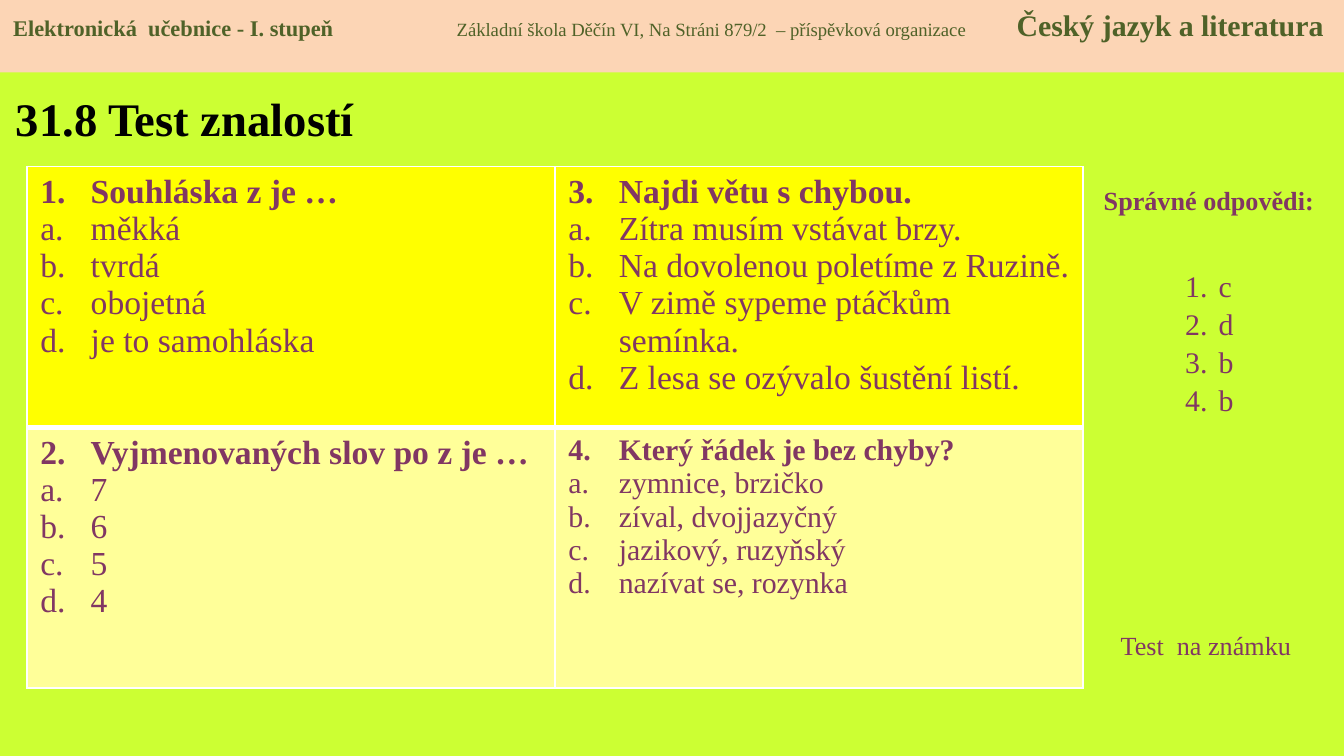
from lxml.etree import SubElement
from pptx import Presentation
from pptx.dml.color import RGBColor
from pptx.enum.shapes import MSO_SHAPE as Shape
from pptx.enum.text import MSO_ANCHOR as Anchor, PP_ALIGN as Align
from pptx.oxml.ns import qn
from pptx.util import Pt

COLORS = {
    "page": "CCFF33", "header": "FCD5B5", "header_text": "4F6228",
    "title": "000000", "text": "813763", "border": "FFFFFF",
    "top_row": "FFFF00", "bottom_row": "FFFF99",
}

# Each question: text size, heading, options
QUESTIONS = [
    [(18, "Souhláska z je …", ["měkká", "tvrdá", "obojetná", "je to samohláska"]),
     (18, "Najdi větu s chybou.",
      ["Zítra musím vstávat brzy.", "Na dovolenou poletíme z Ruzině.",
       "V zimě sypeme ptáčkům semínka.", "Z lesa se ozývalo šustění listí."])],
    [(18, "Vyjmenovaných slov po z je …", ["7", "6", "5", "4"]),
     (16, "Který řádek je bez chyby?",
      ["zymnice, brzičko", "zíval, dvojjazyčný", "jazikový, ruzyňský",
       "nazívat se, rozynka"])],
]
HEADER = [("Elektronická  učebnice - I. stupeň", 12, True),
          ("\tZákladní škola Děčín VI, Na Stráni 879/2  – příspěvková organizace", 10, False),
          ("\tČeský jazyk a literatura", 16, True)]
HEADER_TABS = [237.6, 537.6]


class SlideBuilder:
    font = "Times New Roman"

    def __init__(self, page):
        self.page = page

    def color(self, name):
        return RGBColor.from_string(COLORS[name])

    def paint(self, target, name):
        target.fill.solid()
        target.fill.fore_color.rgb = self.color(name)

    def style(self, span, size, color="text", bold=False):
        span.font.name = self.font
        span.font.size = Pt(size)
        span.font.bold = bold
        span.font.color.rgb = self.color(color)

    def number(self, para, indent, scheme, start=1):
        props = para._p.get_or_add_pPr()
        props.set("marL", str(Pt(indent)))
        props.set("indent", str(-Pt(indent)))
        bullet = SubElement(props, qn("a:buAutoNum"), type=scheme)
        if start > 1:
            bullet.set("startAt", str(start))

    def text(self, area, lines, size, color="text", bold=False, align=Align.LEFT):
        box = self.page.shapes.add_textbox(*map(Pt, area))
        frame = box.text_frame
        frame.word_wrap = True
        frame.text = "\n".join(lines)
        for para in frame.paragraphs:
            para.alignment = align
            self.style(para.runs[0], size, color, bold)
        return frame

    def numbered_answers(self, area, answers, size):
        frame = self.text(area, answers, size)
        frame.margin_top = Pt(24.4)
        for para in frame.paragraphs:
            self.number(para, 18, "arabicPeriod")
            para.space_after = Pt(1.3)

    def header(self, area, spans, tabs):
        bar = self.page.shapes.add_shape(Shape.RECTANGLE, *map(Pt, area))
        bar.shadow.inherit = False
        self.paint(bar, "header")
        bar.line.fill.background()
        bar.text_frame.vertical_anchor = Anchor.TOP
        para = bar.text_frame.paragraphs[0]
        para.alignment = Align.LEFT
        stops = SubElement(para._p.get_or_add_pPr(), qn("a:tabLst"))
        for position in tabs:
            SubElement(stops, qn("a:tab"), pos=str(Pt(position)), algn="l")
        for words, size, bold in spans:
            span = para.add_run()
            span.text = words
            self.style(span, size, "header_text", bold)

    def borders(self, cell, bottom):
        props = cell._tc.get_or_add_tcPr()
        for side, width in (("L", 1), ("R", 1), ("T", 1), ("B", bottom)):
            line = SubElement(props, qn("a:ln" + side), w=str(Pt(width)))
            fill = SubElement(line, qn("a:solidFill"))
            SubElement(fill, qn("a:srgbClr"), val=COLORS["border"])

    def question(self, cell, number, size, heading, options):
        cell.text_frame.text = "\n".join([heading, *options])
        for index, para in enumerate(cell.text_frame.paragraphs):
            if index == 0:
                self.number(para, 27, "arabicPeriod", number)
            else:
                self.number(para, 27, "alphaLcPeriod")
            self.style(para.runs[0], size, bold=index == 0)

    def question_table(self, area, questions):
        rows, columns = len(questions), len(questions[0])
        table = self.page.shapes.add_table(rows, columns, *map(Pt, area)).table
        fills = ["top_row", "bottom_row"]
        for row, items in enumerate(questions):
            for column, item in enumerate(items):
                cell = table.cell(row, column)
                self.borders(cell, bottom=3 if row == 0 else 1)
                self.paint(cell, fills[row])
                # Questions are numbered down the columns
                self.question(cell, column * rows + row + 1, *item)


def main():
    deck = Presentation()
    deck.slide_width, deck.slide_height = Pt(720), Pt(405)
    page = deck.slides.add_slide(deck.slide_layouts[6])
    builder = SlideBuilder(page)
    builder.paint(page.background, "page")

    # Title
    title = builder.text((1.4, 39.6, 229.7, 46.8), ["31.8 Test znalostí"], 25, "title", True)
    title.vertical_anchor = Anchor.MIDDLE

    # Questions
    builder.question_table((14.4, 89.3, 565.9, 279.4), QUESTIONS)

    # Answer key
    builder.text((579.6, 95, 136.1, 24.5), ["Správné odpovědi:"], 14,
                 bold=True, align=Align.CENTER)
    builder.numbered_answers((627.8, 118.8, 39.6, 143.3), ["c", "d", "b", "b"], 16)
    builder.text((593.3, 333.4, 113, 24.5), ["Test  na známku"], 14)

    # Header bar
    builder.header((0, 0, 720, 38.9), HEADER, HEADER_TABS)
    deck.save("out.pptx")


if __name__ == "__main__":
    main()
